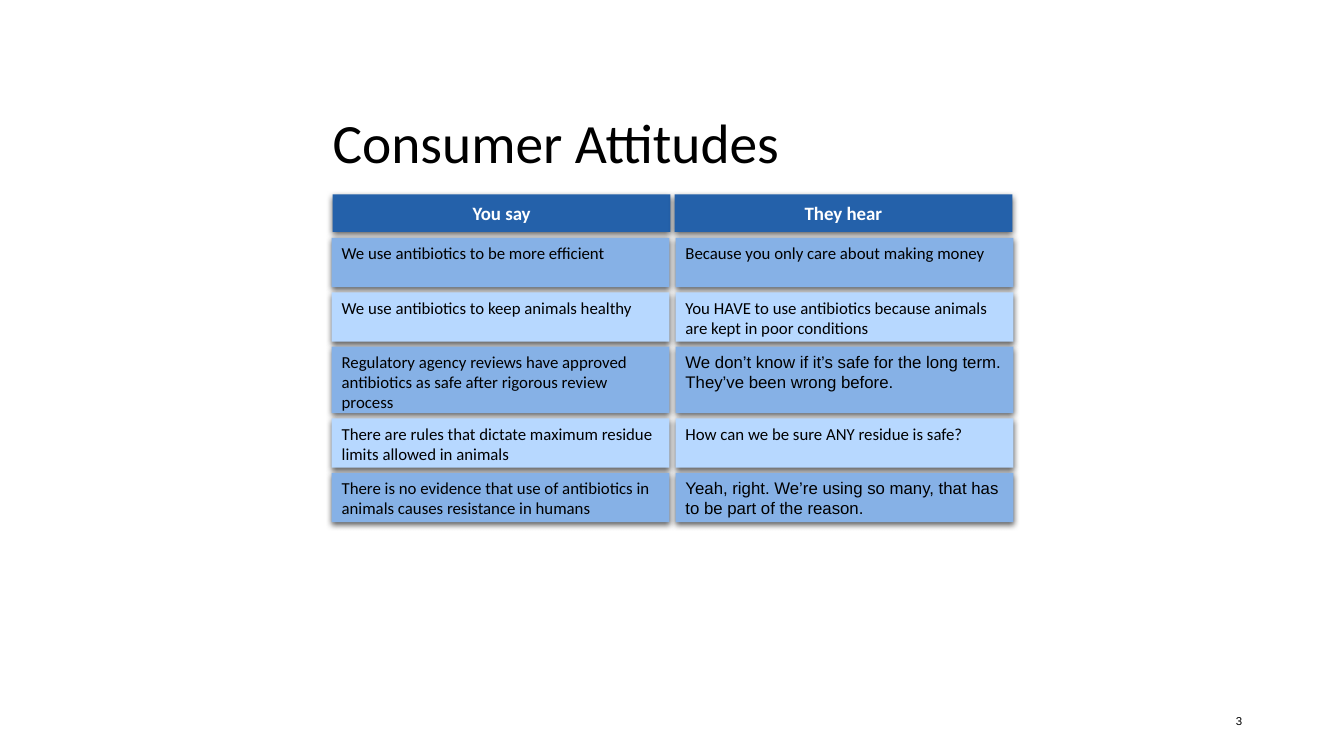
import pptx
import pptx.util
import pptx.dml.color
import pptx.enum.shapes
import pptx.enum.text
import pptx.oxml
import pptx.oxml.ns

Inches = pptx.util.Inches
Pt = pptx.util.Pt
ALIGN = pptx.enum.text.PP_ALIGN
ANCHOR = pptx.enum.text.MSO_ANCHOR

SHADOW = (
    f'<a:effectLst {pptx.oxml.ns.nsdecls("a")}>'
    f'<a:outerShdw blurRad="{Pt(4.5)}" dist="{Pt(1.5)}" dir="5400000" rotWithShape="0">'
    '<a:srgbClr val="000000"><a:alpha val="63000"/></a:srgbClr>'
    '</a:outerShdw></a:effectLst>'
)


def color(value):
    return pptx.dml.color.RGBColor.from_string(value)


def write(shape, text, font="Calibri", size=12, ink="000000", bold=False,
          align=ALIGN.LEFT, anchor=ANCHOR.TOP, spacing=1.0):
    frame = shape.text_frame
    frame.word_wrap = True
    frame.vertical_anchor = anchor
    para = frame.paragraphs[0]
    para.alignment = align
    para.line_spacing = spacing
    span = para.add_run()
    span.text = text
    span.font.name = font
    span.font.size = Pt(size)
    span.font.bold = bold
    span.font.color.rgb = color(ink)


class AttitudeSlide:
    header_fill = "2461AA"
    row_fills = ("86B1E6", "B7D8FF")
    card_width = 3.35

    def __init__(self, deck):
        self.page = deck.slides.add_slide(deck.slide_layouts[6])

    def label(self, left, top, width, height, text, **style):
        box = self.page.shapes.add_textbox(
            Inches(left), Inches(top), Inches(width), Inches(height))
        write(box, text, anchor=ANCHOR.MIDDLE, **style)

    def card(self, left, top, height, fill, text, **style):
        box = self.page.shapes.add_shape(
            pptx.enum.shapes.MSO_SHAPE.RECTANGLE,
            Inches(left), Inches(top), Inches(self.card_width), Inches(height))
        box.fill.solid()
        box.fill.fore_color.rgb = color(fill)
        box.line.fill.background()
        box.shadow.inherit = False
        properties = box.element.spPr
        effects = properties.find(pptx.oxml.ns.qn("a:effectLst"))
        properties.replace(effects, pptx.oxml.parse_xml(SHADOW))
        write(box, text, **style)

    def header(self, left, text):
        self.card(left, 1.93, 0.37, self.header_fill, text, size=13.5, ink="FFFFFF",
                  bold=True, align=ALIGN.CENTER, anchor=ANCHOR.MIDDLE)

    def rows(self, rows, top=2.36, gap=0.05):
        for index, (height, said, heard, heard_font) in enumerate(rows):
            fill = self.row_fills[index % 2]
            self.card(3.29, top, height, fill, said)
            self.card(6.7, top, height, fill, heard, font=heard_font)
            top += height + gap


ROWS = [
    (0.49, "We use antibiotics to be more efficient",
     "Because you only care about making money", "Calibri"),
    (0.49, "We use antibiotics to keep animals healthy",
     "You HAVE to use antibiotics because animals are kept in poor conditions", "Calibri"),
    (0.66, "Regulatory agency reviews have approved antibiotics as safe after rigorous review process",
     "We don’t know if it’s safe for the long term. They’ve been wrong before.", "Arial"),
    (0.49, "There are rules that dictate maximum residue limits allowed in animals",
     "How can we be sure ANY residue is safe?", "Calibri"),
    (0.49, "There is no evidence that use of antibiotics in animals causes resistance in humans",
     "Yeah, right. We’re using so many, that has to be part of the reason.", "Arial"),
]


def main():
    deck = pptx.Presentation()
    deck.slide_width = Inches(13.33)
    deck.slide_height = Inches(7.5)
    slide = AttitudeSlide(deck)
    slide.label(3.2, 1.2, 6.75, 0.48, "Consumer Attitudes", size=39.6, spacing=0.9)
    slide.header(3.3, "You say")
    slide.header(6.69, "They hear")
    slide.rows(ROWS)
    slide.label(9.42, 6.95, 3, 0.4, "3", font="Arial", size=8.2, align=ALIGN.RIGHT)
    deck.save("out.pptx")


if __name__ == "__main__":
    main()
